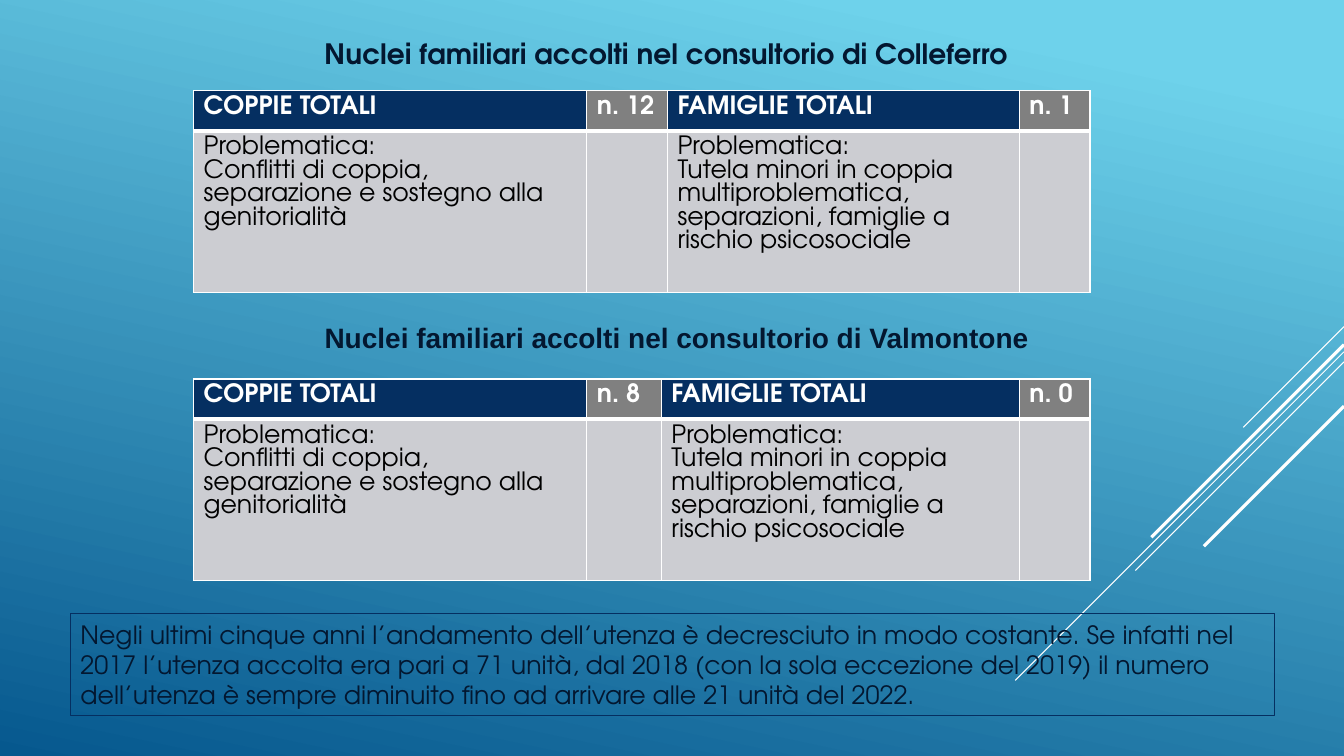
from lxml.etree import SubElement
from pptx import Presentation
from pptx.dml.color import RGBColor
from pptx.enum.shapes import MSO_CONNECTOR, MSO_SHAPE
from pptx.enum.text import MSO_ANCHOR, PP_ALIGN
from pptx.oxml.ns import qn
from pptx.util import Inches, Pt

FONT = "TeX Gyre Adventor"
INK, NAVY, GRAY, PALE, WHITE, BLACK = "031730", "052F61", "808080", "CCCDD2", "FFFFFF", "000000"
BACKGROUND = [(0.1, "6ED2EB"), (1, "06588E")]
RIGHT_EDGE = 13.33
RAYS = [(3.24, 1, 0.75), (3.49, 3.26, 0.75), (3.59, 2.07, 0.75), (3.42, 1.91, 2.25), (4.03, 1.39, 2.25)]
COUPLES = ["Problematica:", "Conflitti di coppia, separazione e sostegno alla genitorialità"]
FAMILIES = ["Problematica:", "Tutela minori in coppia multiproblematica, separazioni, famiglie a rischio psicosociale"]
CENTRES = [
    dict(title="Nuclei familiari accolti nel consultorio di Colleferro", font=FONT, title_top=0.31,
         title_width=7.1, top=0.9, columns=[3.9, 0.8, 3.49, 0.7], counts=["n. 12", "n. 1"]),
    dict(title="Nuclei familiari accolti nel consultorio di Valmontone", font="Arial", title_top=3.13,
         title_width=7.61, top=3.76, columns=[3.9, 0.74, 3.55, 0.7], counts=["n. 8", "n. 0"]),
]
ROWS = [0.4, 1.6]
SUMMARY = (
    "Negli ultimi cinque anni l’andamento dell’utenza è decresciuto in modo costante. "
    "Se infatti nel 2017 l’utenza accolta era pari a 71 unità, dal 2018 (con la sola eccezione "
    "del 2019) il numero dell’utenza è sempre diminuito fino ad arrivare alle 21 unità del 2022."
)


def rgb(value):
    return RGBColor.from_string(value)


def write(tf, lines, size, color, bold=False, font=FONT):
    tf.word_wrap = True
    tf.text = "\n".join(lines)
    for p in tf.paragraphs:
        p.alignment = PP_ALIGN.LEFT
        p.font.size, p.font.name, p.font.bold = Pt(size), font, bold
        p.font.color.rgb = rgb(color)


def add_borders(cell, widths):
    tc_pr = cell._tc.get_or_add_tcPr()
    for side, width in zip("LRTB", widths):
        ln = SubElement(tc_pr, qn(f"a:ln{side}"), w=str(Pt(width)))
        SubElement(SubElement(ln, qn("a:solidFill")), qn("a:srgbClr"), val=WHITE)


def add_ray(slide, top, reach, width):
    line = slide.shapes.add_connector(
        MSO_CONNECTOR.STRAIGHT, Inches(RIGHT_EDGE), Inches(top),
        Inches(RIGHT_EDGE - reach), Inches(top + reach))
    line.line.color.rgb = rgb(WHITE)
    line.line.width = Pt(width)
    SubElement(line._element.spPr, qn("a:effectLst"))


def add_centre(slide, title, font, title_top, title_width, top, columns, counts):
    box = slide.shapes.add_textbox(Inches(3.12), Inches(title_top), Inches(title_width), Inches(0.44))
    write(box.text_frame, [title], 20, INK, True, font)

    table = slide.shapes.add_table(
        2, 4, Inches(1.92), Inches(top), Inches(sum(columns)), Inches(sum(ROWS))).table
    for column, width in zip(table.columns, columns):
        column.width = Inches(width)
    for row, height in zip(table.rows, ROWS):
        row.height = Inches(height)
    header = [["COPPIE TOTALI"], [counts[0]], ["FAMIGLIE TOTALI"], [counts[1]]]
    body = [COUPLES, [""], FAMILIES, [""]]
    for i, (head, lines) in enumerate(zip(header, body)):
        styles = [
            (head, WHITE, True, GRAY if i % 2 else NAVY, (1, 1, 1, 3)),
            (lines, BLACK, False, PALE, (1, 1, 3, 1)),
        ]
        for j, (text, color, bold, fill, borders) in enumerate(styles):
            cell = table.cell(j, i)
            write(cell.text_frame, text, 18, color, bold)
            add_borders(cell, borders)
            cell.fill.solid()
            cell.fill.fore_color.rgb = rgb(fill)


def add_summary(slide):
    sp = slide.shapes.add_shape(
        MSO_SHAPE.RECTANGLE, Inches(0.7), Inches(6.09), Inches(11.94), Inches(1.01))
    sp.shadow.inherit = False
    sp.fill.background()
    sp.line.color.rgb = rgb(NAVY)
    sp.line.width = Pt(0.75)
    sp.text_frame.vertical_anchor = MSO_ANCHOR.TOP
    write(sp.text_frame, [SUMMARY], 18, INK)


def main():
    """Build the slide on families received by the two family centres."""
    prs = Presentation()
    prs.slide_width, prs.slide_height = Inches(RIGHT_EDGE), Inches(7.5)
    slide = prs.slides.add_slide(prs.slide_layouts[6])
    fill = slide.background.fill
    fill.gradient()
    fill.gradient_angle = 258
    for stop, (position, color) in zip(fill.gradient_stops, BACKGROUND):
        stop.position = position
        stop.color.rgb = rgb(color)
    for ray in RAYS:
        add_ray(slide, *ray)
    for centre in CENTRES:
        add_centre(slide, **centre)
    add_summary(slide)
    prs.save("out.pptx")


if __name__ == "__main__":
    main()
